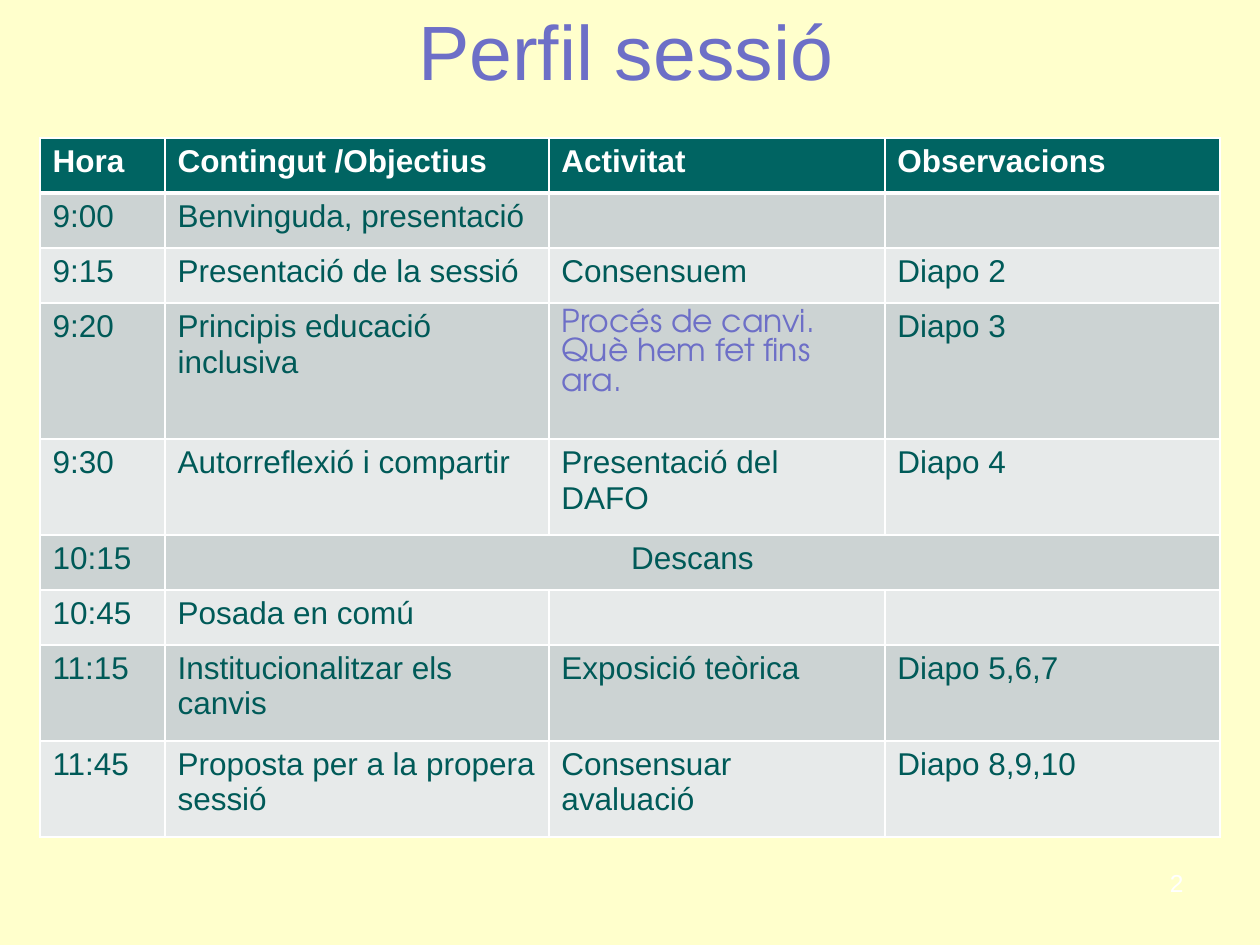
from lxml import etree
from pptx import Presentation
from pptx.dml.color import RGBColor
from pptx.enum.text import MSO_ANCHOR, PP_ALIGN
from pptx.oxml.ns import qn
from pptx.util import Emu, Pt

PX = 914400 // 126
LEFT, CENTER, RIGHT = PP_ALIGN.LEFT, PP_ALIGN.CENTER, PP_ALIGN.RIGHT
MIDDLE = MSO_ANCHOR.MIDDLE

CREAM = RGBColor(0xFF, 0xFF, 0xCC)
VIOLET = RGBColor(0x6D, 0x6F, 0xC7)
TEAL = RGBColor(0x00, 0x64, 0x62)
DARK_TEAL = RGBColor(0x00, 0x5A, 0x58)
WHITE = RGBColor(0xFF, 0xFF, 0xFF)
BANDS = (RGBColor(0xE7, 0xEA, 0xEA), RGBColor(0xCC, 0xD3, 0xD3))

COLS = (125, 384, 336, 335)
ROW_HEIGHTS = (55, 55, 55, 136, 96, 55, 55, 96, 96)
ROWS = (
    ("Hora", "Contingut /Objectius", "Activitat", "Observacions"),
    ("9:00", "Benvinguda, presentació", "", ""),
    ("9:15", "Presentació de la sessió", "Consensuem", "Diapo 2"),
    ("9:20", "Principis educació inclusiva",
     "Procés de canvi. Què hem fet fins ara.", "Diapo 3"),
    ("9:30", "Autorreflexió i compartir", "Presentació del DAFO", "Diapo 4"),
    ("10:15", "Descans", "", ""),
    ("10:45", "Posada en comú", "", ""),
    ("11:15", "Institucionalitzar els canvis", "Exposició teòrica", "Diapo 5,6,7"),
    ("11:45", "Proposta per a la propera sessió", "Consensuar avaluació", "Diapo 8,9,10"),
)
BREAK_ROW = 5
CHANGE_CELL = (3, 2)


def px(n):
    return Emu(n * PX)


def write(tf, text, size, color, font="Arial", bold=False, align=LEFT):
    tf.text = text
    p = tf.paragraphs[0]
    p.alignment = align
    p.font.size = Pt(size)
    for r in p.runs:
        r.font.size, r.font.name, r.font.bold = Pt(size), font, bold
        r.font.color.rgb = color


def add_label(s, x, y, w, h, text, size, color, align):
    tf = s.shapes.add_textbox(px(x), px(y), px(w), px(h)).text_frame
    tf.word_wrap = True
    tf.vertical_anchor = MIDDLE
    write(tf, text, size, color, align=align)


def set_borders(cell, bottom):
    tcPr = cell._tc.get_or_add_tcPr()
    widths = {"a:lnL": 1, "a:lnR": 1, "a:lnT": 1, "a:lnB": bottom}
    for i, (tag, width) in enumerate(widths.items()):
        ln = etree.Element(qn(tag), w=str(Pt(width)))
        fill = etree.SubElement(ln, qn("a:solidFill"))
        etree.SubElement(fill, qn("a:srgbClr"), val=str(WHITE))
        tcPr.insert(i, ln)


def add_schedule(s, x, y):
    table = s.shapes.add_table(len(ROWS), len(COLS), px(x), px(y),
                               px(sum(COLS)), px(sum(ROW_HEIGHTS))).table
    for col, width in zip(table.columns, COLS):
        col.width = px(width)
    for row, height in zip(table.rows, ROW_HEIGHTS):
        row.height = px(height)

    for i, texts in enumerate(ROWS):
        header = i == 0
        for j, text in enumerate(texts):
            cell = table.cell(i, j)
            cell.fill.solid()
            cell.fill.fore_color.rgb = TEAL if header else BANDS[i % 2]
            set_borders(cell, 3 if header else 1)
            color, font = WHITE if header else DARK_TEAL, "Arial"
            if (i, j) == CHANGE_CELL:
                color, font = VIOLET, "TeX Gyre Adventor"
            align = CENTER if (i, j) == (BREAK_ROW, 1) else LEFT
            write(cell.text_frame, text, 18, color, font, header, align)

    # The break spans all columns after the hour
    table.cell(BREAK_ROW, 1).merge(table.cell(BREAK_ROW, len(COLS) - 1))


def main():
    prs = Presentation()
    prs.slide_width, prs.slide_height = px(1260), px(945)
    s = prs.slides.add_slide(prs.slide_layouts[6])
    s.background.fill.solid()
    s.background.fill.fore_color.rgb = CREAM

    # Title
    add_label(s, 59, 0, 1134, 100, "Perfil sessió", 44, VIOLET, CENTER)
    # Session schedule
    add_schedule(s, 40, 138)
    # Page number
    add_label(s, 1096, 860, 100, 46, "2", 14, WHITE, RIGHT)

    prs.save("out.pptx")


if __name__ == "__main__":
    main()
